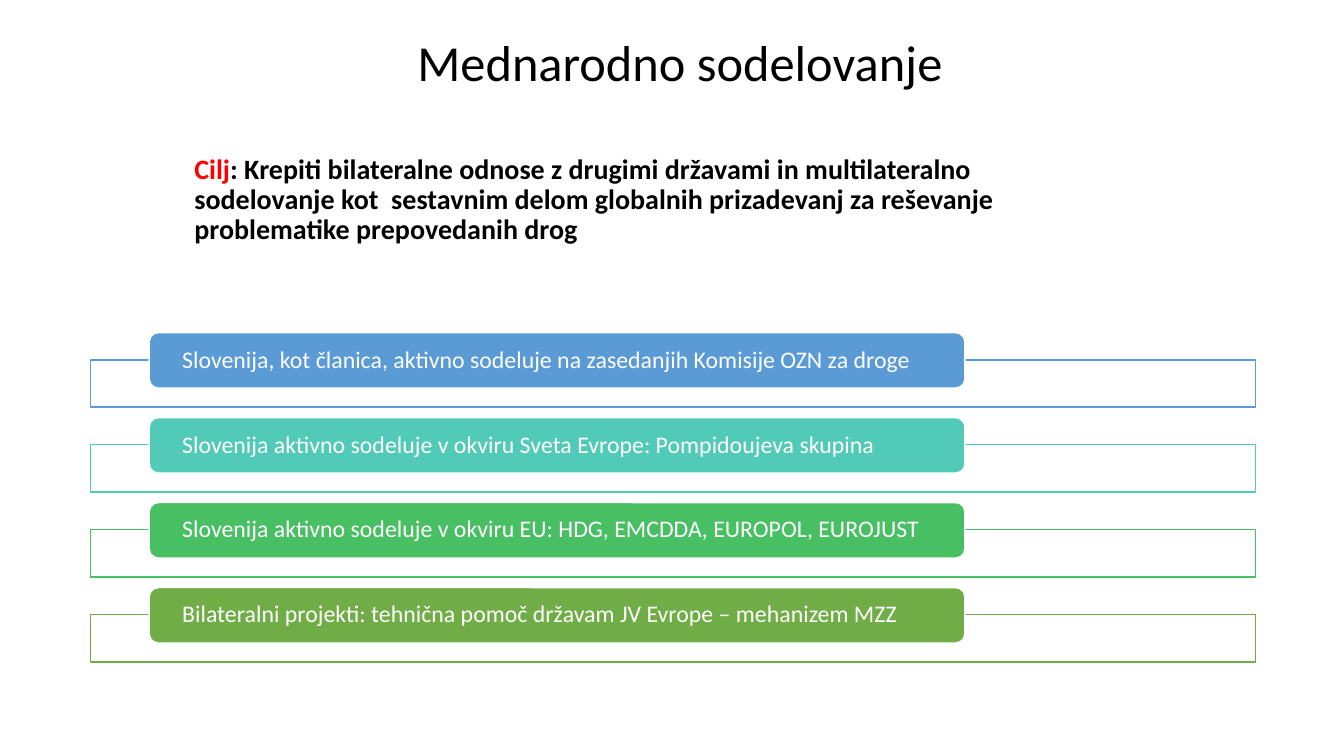
"""Build the slide on international cooperation."""
from pptx import Presentation
from pptx.dml.color import RGBColor
from pptx.enum.shapes import MSO_SHAPE
from pptx.enum.text import MSO_ANCHOR, PP_ALIGN
from pptx.util import Inches, Pt

THEME = {
    "font": "Calibri",
    "black": "000000", "white": "FFFFFF", "red": "FF0000",
    "title": 36, "goal": 20, "label": 17,
    "rows": ["5B9BD5", "52CAB8", "49BF64", "70AD47"],
}


def write(shape, text, size, color="black", bold=False, anchor=MSO_ANCHOR.MIDDLE):
    """Add a formatted run to the first paragraph of a shape."""
    frame = shape.text_frame
    frame.word_wrap = True
    frame.vertical_anchor = anchor
    para = frame.paragraphs[0]
    para.alignment = PP_ALIGN.LEFT
    para.line_spacing = 0.9
    run = para.add_run()
    run.text = text
    run.font.name = THEME["font"]
    run.font.size = Pt(THEME[size])
    run.font.bold = bold
    run.font.color.rgb = RGBColor.from_string(THEME[color])


def block(kind, left, top, width, height, fill, line):
    """Add a filled and outlined shape without shadow."""
    shape = slide.shapes.add_shape(
        kind, Inches(left), Inches(top), Inches(width), Inches(height))
    shape.shadow.inherit = False
    shape.fill.solid()
    shape.fill.fore_color.rgb = RGBColor.from_string(fill)
    shape.line.color.rgb = RGBColor.from_string(line)
    shape.line.width = Pt(1)
    return shape


deck = Presentation()
deck.slide_width, deck.slide_height = Inches(13.33), Inches(7.5)
slide = deck.slides.add_slide(deck.slide_layouts[5])

title = slide.shapes.title
title.left, title.top = Inches(4.04), Inches(0.29)
title.width, title.height = Inches(9), Inches(0.71)
write(title, "Mednarodno sodelovanje", "title")

goal = slide.shapes.add_textbox(Inches(1.83), Inches(1), Inches(9.2), Inches(2))
goal.text_frame.margin_top = Inches(0.54)
parts = [
    ("Cilj", "red"),
    (": Krepiti bilateralne odnose z drugimi državami in multilateralno "
     "sodelovanje kot  sestavnim delom globalnih prizadevanj za reševanje "
     "problematike prepovedanih drog", "black"),
]
for text, color in parts:
    write(goal, text, "goal", color, bold=True, anchor=MSO_ANCHOR.TOP)

labels = [
    "Slovenija, kot članica, aktivno sodeluje na zasedanjih Komisije OZN za droge",
    "Slovenija aktivno sodeluje v okviru Sveta Evrope: Pompidoujeva skupina",
    "Slovenija aktivno sodeluje v okviru EU: HDG, EMCDDA, EUROPOL, EUROJUST",
    "Bilateralni projekti: tehnična pomoč državam JV Evrope – mehanizem MZZ",
]
white = THEME["white"]
for row, (label, hue) in enumerate(zip(labels, THEME["rows"])):
    top = 3.3 + row * 0.843
    block(MSO_SHAPE.RECTANGLE, 0.9, top + 0.27, 11.55, 0.47, white, hue)
    pill = block(MSO_SHAPE.ROUNDED_RECTANGLE, 1.48, top, 8.09, 0.55, hue, white)
    frame = pill.text_frame
    frame.margin_left = frame.margin_right = Inches(0.3)
    frame.margin_top = frame.margin_bottom = 0
    write(pill, label, "label", "white")

deck.save("out.pptx")
